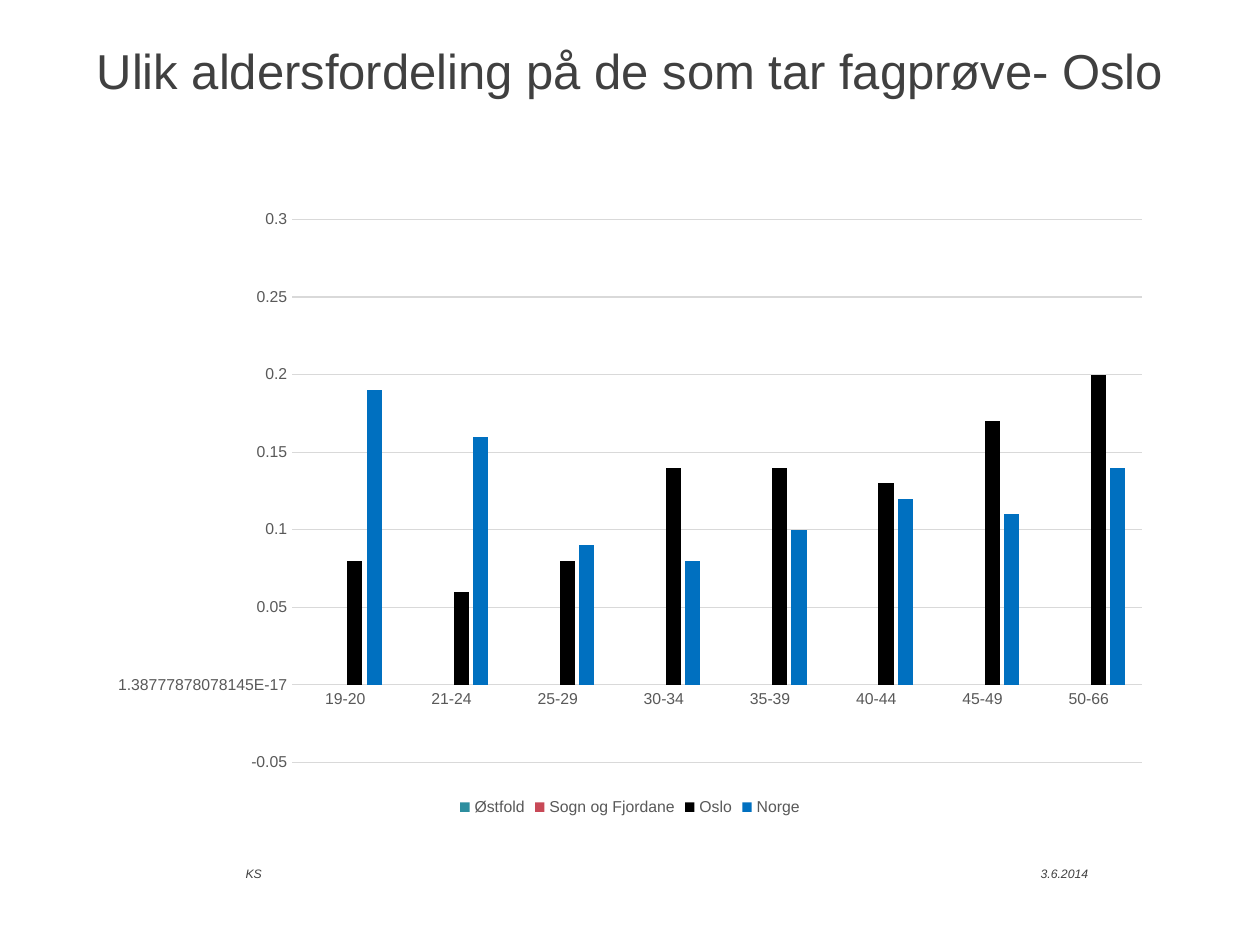
from pptx import Presentation
from pptx.chart.data import CategoryChartData
from pptx.dml.color import RGBColor
from pptx.enum.chart import XL_CHART_TYPE, XL_LEGEND_POSITION, XL_TICK_MARK
from pptx.enum.text import MSO_ANCHOR
from pptx.util import Cm, Pt


def color(hex_string):
    return RGBColor.from_string(hex_string)


def format_font(font, size, hex_string, italic=False):
    values = {"name": "Arial", "size": Pt(size), "italic": italic, "bold": False}
    for attribute, value in values.items():
        setattr(font, attribute, value)
    font.color.rgb = color(hex_string)


presentation = Presentation()
presentation.slide_width = Cm(25.4)
presentation.slide_height = Cm(19.05)
slide = presentation.slides.add_slide(presentation.slide_layouts[6])

# Title and footer
texts = [
    ("Ulik aldersfordeling på de som tar fagprøve- Oslo",
     (1.95, 0.81, 21.49, 1.02), 28, False, MSO_ANCHOR.TOP),
    ("3.6.2014", (20.98, 17.47, 1.52, 0.3), 7, True, MSO_ANCHOR.MIDDLE),
    ("KS", (4.95, 17.47, 8.05, 0.3), 7, True, MSO_ANCHOR.MIDDLE),
]
for text, box, size, italic, anchor in texts:
    shape = slide.shapes.add_textbox(*map(Cm, box))
    frame_format = {
        "margin_left": 0, "margin_top": 0, "margin_right": 0, "margin_bottom": 0,
        "word_wrap": False, "vertical_anchor": anchor,
    }
    for attribute, value in frame_format.items():
        setattr(shape.text_frame, attribute, value)
    paragraph = shape.text_frame.paragraphs[0]
    run = paragraph.add_run()
    run.text = text
    format_font(run.font, size, "404040", italic)

# Age distribution chart
age_groups = ["19-20", "21-24", "25-29", "30-34", "35-39", "40-44", "45-49", "50-66"]
no_values = [None] * len(age_groups)
regions = [
    ("Østfold", "2D8E9F", no_values),
    ("Sogn og Fjordane", "C84957", no_values),
    ("Oslo", "000000", [0.08, 0.06, 0.08, 0.14, 0.14, 0.13, 0.17, 0.2]),
    ("Norge", "0070C0", [0.19, 0.16, 0.09, 0.08, 0.1, 0.12, 0.11, 0.14]),
]
chart_data = CategoryChartData()
chart_data.categories = age_groups
for name, _, values in regions:
    chart_data.add_series(name, values)

chart = slide.shapes.add_chart(
    XL_CHART_TYPE.COLUMN_CLUSTERED, Cm(1.95), Cm(3.99), Cm(21.5), Cm(12.57), chart_data
).chart
chart.has_title = False
format_font(chart.font, 10, "000000")

plot = chart.plots[0]
for attribute, value in {"gap_width": 219, "overlap": -27, "vary_by_categories": False}.items():
    setattr(plot, attribute, value)
for series, (_, fill, _) in zip(plot.series, regions):
    series.format.fill.solid()
    series.format.fill.fore_color.rgb = color(fill)
    series.invert_if_negative = False

for axis in (chart.category_axis, chart.value_axis):
    axis.major_tick_mark = XL_TICK_MARK.NONE
    axis.minor_tick_mark = XL_TICK_MARK.NONE
    format_font(axis.tick_labels.font, 9, "595959")

value_axis = chart.value_axis
# The product lies just above 0.3, which adds a gridline below zero
value_axis.maximum_scale = 3 * 0.1
value_axis.tick_labels.number_format = "General"
value_axis.tick_labels.number_format_is_linked = False
value_axis.format.line.fill.background()
value_axis.has_major_gridlines = True
for line in (chart.category_axis.format.line, value_axis.major_gridlines.format.line):
    line.color.rgb = color("D9D9D9")
    line.width = Pt(0.75)

chart.has_legend = True
chart.legend.position = XL_LEGEND_POSITION.BOTTOM
chart.legend.include_in_layout = False
format_font(chart.legend.font, 9, "595959")

presentation.save("out.pptx")
